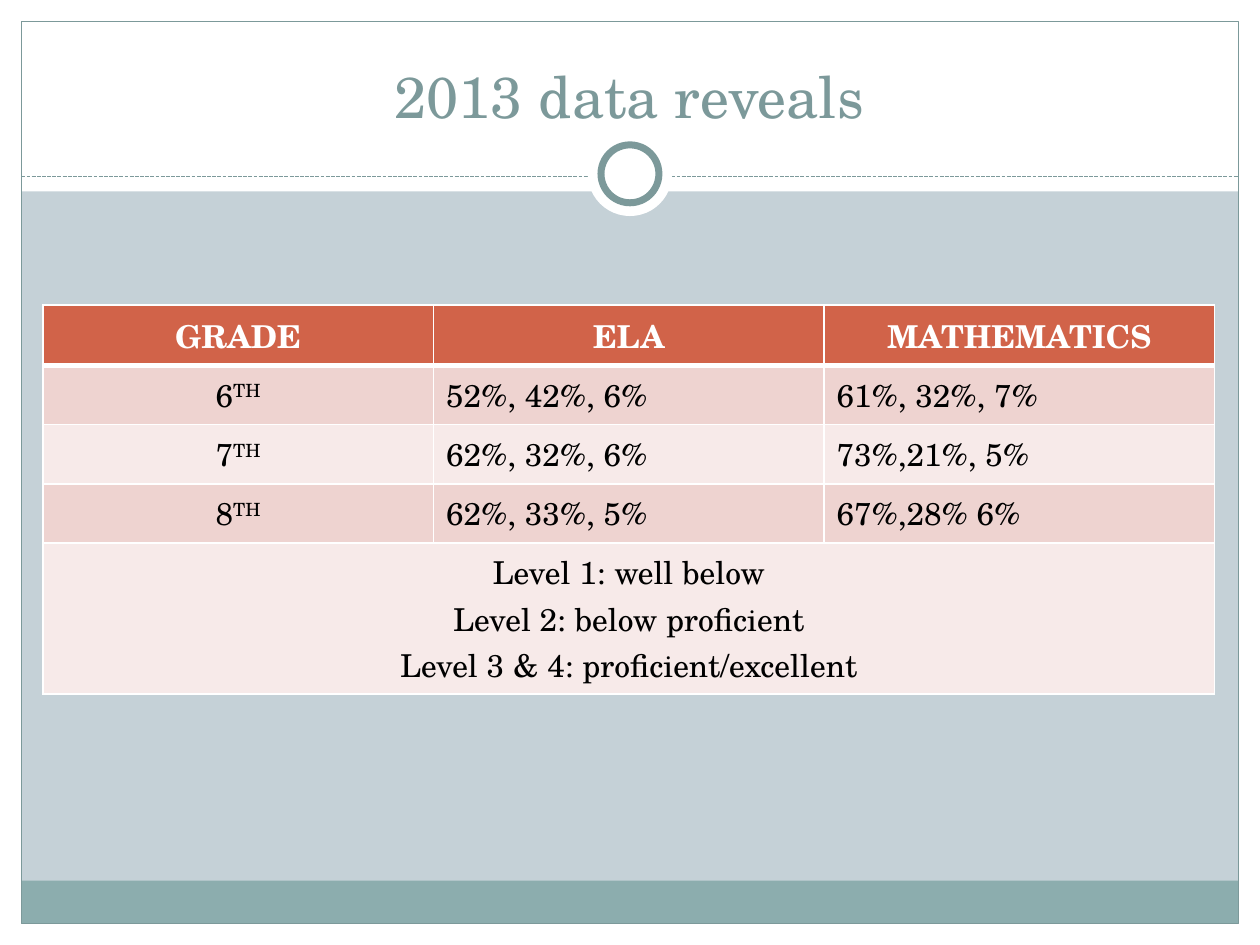
from lxml import etree
from pptx import Presentation
from pptx.dml.color import RGBColor
from pptx.enum import dml, shapes, text
from pptx.oxml import ns
from pptx.util import Inches, Pt

COLORS = {
    "background": "C5D1D7", "white": "FFFFFF", "black": "000000",
    "footer": "8CADAE", "accent": "7C999A",
    "header": "D16349", "band_dark": "EED3D0", "band_light": "F7EAE9",
}
LEVELS = ["Level 1: well below", "Level 2: below proficient",
          "Level 3 & 4: proficient/excellent"]
HEADINGS = ["GRADE", "ELA", "MATHEMATICS"]
RESULTS = [
    ("6", "52%, 42%, 6%", "61%, 32%, 7%"),
    ("7", "62%, 32%, 6%", "73%,21%, 5%"),
    ("8", "62%, 33%, 5%", "67%,28% 6%"),
]


def rgb(name):
    return RGBColor.from_string(COLORS[name])


def write(paragraph, words, font="TeX Gyre Schola", size=18, color="black",
          bold=False, centered=False, raised=False):
    """Add one run to the paragraph; raised makes it superscript."""
    if centered:
        paragraph.alignment = text.PP_ALIGN.CENTER
    run = paragraph.add_run()
    run.text = words
    run.font.name, run.font.size, run.font.bold = font, Pt(size), bold
    run.font.color.rgb = rgb(color)
    if raised:
        run._r.get_or_add_rPr().set("baseline", "30000")


class SlideBuilder:
    def __init__(self, slide):
        self.slide = slide
        slide.background.fill.solid()
        slide.background.fill.fore_color.rgb = rgb("background")

    def shape(self, left, top, width, height, fill=None, line=None,
              weight=0.75, kind=shapes.MSO_SHAPE.RECTANGLE):
        shape = self.slide.shapes.add_shape(
            kind, Inches(left), Inches(top), Inches(width), Inches(height))
        shape.shadow.inherit = False
        if fill:
            shape.fill.solid()
            shape.fill.fore_color.rgb = rgb(fill)
        else:
            shape.fill.background()
        if line:
            shape.line.color.rgb = rgb(line)
            shape.line.width = Pt(weight)
        else:
            shape.line.fill.background()

    def circle(self, center_x, center_y, diameter, **style):
        self.shape(center_x - diameter / 2, center_y - diameter / 2, diameter,
                   diameter, kind=shapes.MSO_SHAPE.OVAL, **style)

    def dashed_rule(self, left, right, y):
        rule = self.slide.shapes.add_connector(
            shapes.MSO_CONNECTOR.STRAIGHT,
            Inches(left), Inches(y), Inches(right), Inches(y))
        rule.line.color.rgb = rgb("accent")
        rule.line.width = Pt(0.75)
        rule.line.dash_style = dml.MSO_LINE.SQUARE_DOT
        etree.SubElement(rule._element.spPr, ns.qn("a:effectLst"))

    def title(self, words, left, top, width, height):
        box = self.slide.shapes.add_textbox(
            Inches(left), Inches(top), Inches(width), Inches(height))
        box.text_frame.word_wrap = True
        box.text_frame.vertical_anchor = text.MSO_ANCHOR.BOTTOM
        write(box.text_frame.paragraphs[0], words, size=33, color="accent",
              centered=True)

    def table(self, left, top, width, columns, row_heights):
        frame = self.slide.shapes.add_table(
            len(row_heights), columns, Inches(left), Inches(top),
            Inches(width), Inches(sum(row_heights)))
        for row, height in zip(frame.table.rows, row_heights):
            row.height = Inches(height)
        return frame.table

    def cell(self, cell, fill, top=1, bottom=1):
        """Give the cell its fill and white borders; top and bottom in points."""
        properties = cell._tc.get_or_add_tcPr()
        for side, weight in zip("LRTB", (1, 1, top, bottom)):
            border = etree.SubElement(properties, ns.qn(f"a:ln{side}"),
                                      w=str(Pt(weight)))
            paint = etree.SubElement(border, ns.qn("a:solidFill"))
            etree.SubElement(paint, ns.qn("a:srgbClr"), val=COLORS["white"])
        cell.fill.solid()
        cell.fill.fore_color.rgb = rgb(fill)


def add_frame(builder):
    for margin in [(0, 7.33, 10, 0.17), (0, 0, 10, 1.52),
                   (0, 0, 0.17, 7.5), (9.83, 0, 0.17, 7.5)]:
        builder.shape(*margin, fill="white")
    builder.shape(0.17, 6.99, 9.66, 0.34, fill="footer")
    builder.shape(0.17, 0.17, 9.66, 7.16, line="accent")
    builder.dashed_rule(0.17, 9.83, 1.4)
    builder.circle(5, 1.38, 0.67, fill="white")
    builder.circle(5, 1.38, 0.46, fill="white", line="accent", weight=4)


def add_results(builder):
    last = len(RESULTS) + 1
    row_heights = [0.48] + [0.47] * len(RESULTS) + [1.2]
    table = builder.table(0.34, 2.42, 9.3, len(HEADINGS), row_heights)
    for r in range(last + 1):
        fill = "header" if r == 0 else "band_dark" if r % 2 else "band_light"
        for c in range(len(HEADINGS)):
            builder.cell(table.cell(r, c), fill, top=3 if r == 1 else 1,
                         bottom=3 if r == 0 else 1)

    for c, heading in enumerate(HEADINGS):
        write(table.cell(0, c).text_frame.paragraphs[0], heading,
              color="white", bold=True, centered=True)
    for r, result in enumerate(RESULTS, start=1):
        for c, value in enumerate(result):
            write(table.cell(r, c).text_frame.paragraphs[0], value,
                  centered=c == 0)
        write(table.cell(r, 0).text_frame.paragraphs[0], "TH",
              centered=True, raised=True)

    legend = table.cell(last, 0)
    legend.merge(table.cell(last, len(HEADINGS) - 1))
    for i, level in enumerate(LEVELS):
        frame = legend.text_frame
        paragraph = frame.add_paragraph() if i else frame.paragraphs[0]
        write(paragraph, level, centered=True)


def main():
    deck = Presentation()
    deck.slide_width, deck.slide_height = Inches(10), Inches(7.5)
    builder = SlideBuilder(deck.slides.add_slide(deck.slide_layouts[6]))
    add_frame(builder)
    builder.title("2013 data reveals", 0.33, 0.25, 9.33, 0.83)
    add_results(builder)
    deck.save("out.pptx")


if __name__ == "__main__":
    main()
